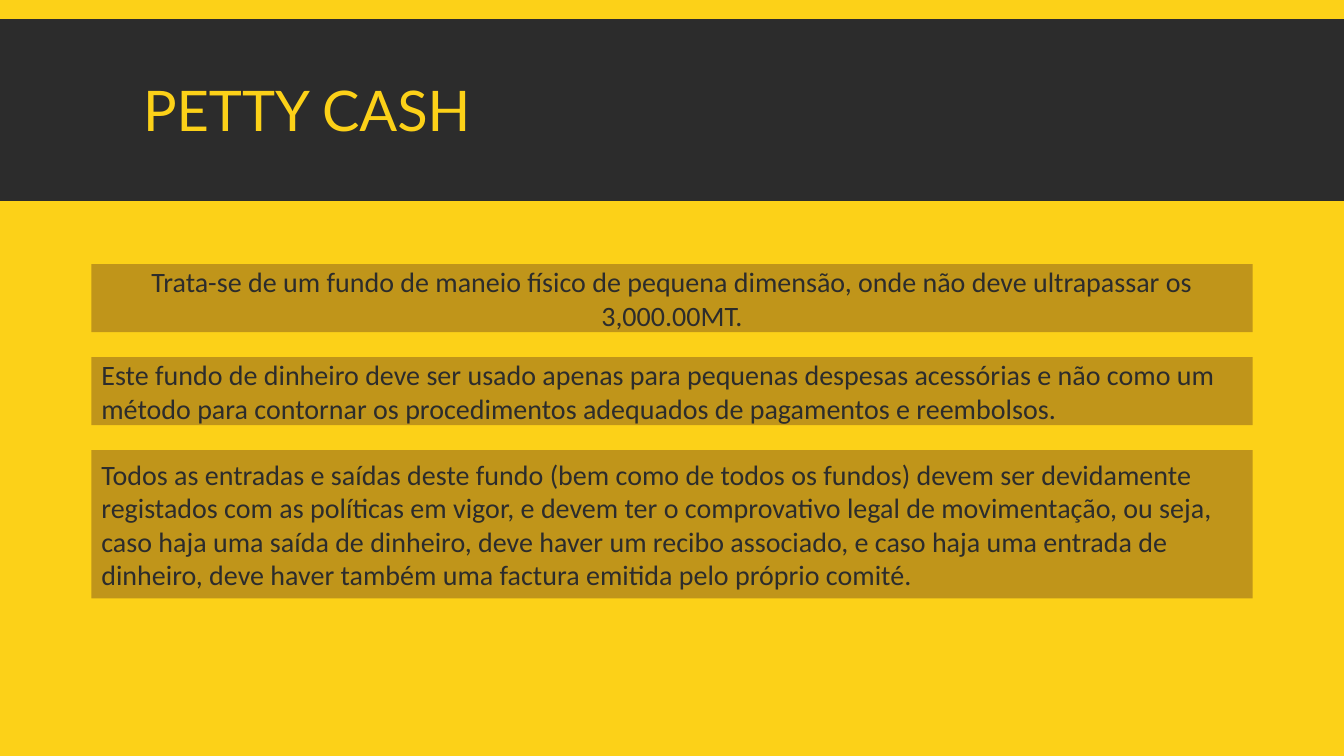
from pptx import Presentation
from pptx.dml.color import RGBColor
from pptx.enum import shapes, text
from pptx.util import Pt

YELLOW, DARK, OCHRE = "FCD118", "2C2C2C", "C0951A"
LEFT, CENTER = text.PP_ALIGN.LEFT, text.PP_ALIGN.CENTER


def add_box(x, y, w, h, color):
    sp = s.shapes.add_shape(shapes.MSO_SHAPE.RECTANGLE, Pt(x), Pt(y), Pt(w), Pt(h))
    sp.shadow.inherit = False
    sp.fill.solid()
    sp.fill.fore_color.rgb = RGBColor.from_string(color)
    sp.line.fill.background()
    return sp


def write(sp, words, size, font, color, align):
    tf = sp.text_frame
    tf.word_wrap = True
    tf.auto_size = text.MSO_AUTO_SIZE.NONE
    tf.vertical_anchor = text.MSO_ANCHOR.MIDDLE
    p = tf.paragraphs[0]
    p.alignment = align
    r = p.add_run()
    r.text = words
    r.font.size = Pt(size)
    r.font.name = font
    r.font.color.rgb = RGBColor.from_string(color)


prs = Presentation()
prs.slide_width, prs.slide_height = Pt(960), Pt(540)
s = prs.slides.add_slide(prs.slide_layouts[5])
s.background.fill.solid()
s.background.fill.fore_color.rgb = RGBColor.from_string(YELLOW)

# Title on its dark band
title = s.shapes.title
title.left, title.top, title.width, title.height = Pt(95), Pt(22.3), Pt(770.4), Pt(118.8)
write(title, "PETTY CASH", 40, "Lato", YELLOW, LEFT)
title.text_frame.paragraphs[0].line_spacing = 0.85
band = add_box(0, 13.7, 960, 129.8, DARK)
title.element.addprevious(band.element)

# Stacked statements with equal gaps
statements = [
    (48.6, CENTER, "Trata-se de um fundo de maneio físico de pequena dimensão, onde não deve "
                   "ultrapassar os 3,000.00MT."),
    (48.6, LEFT, "Este fundo de dinheiro deve ser usado apenas para pequenas despesas acessórias "
                 "e não como um método para contornar os procedimentos adequados de pagamentos "
                 "e reembolsos."),
    (105.8, LEFT, "Todos as entradas e saídas deste fundo (bem como de todos os fundos) devem ser "
                  "devidamente registados com as políticas em vigor, e devem ter o comprovativo "
                  "legal de movimentação, ou seja, caso haja uma saída de dinheiro, deve haver um "
                  "recibo associado, e caso haja uma entrada de dinheiro, deve haver também uma "
                  "factura emitida pelo próprio comité."),
]
top, gap = 188.6, 17.9
for height, align, words in statements:
    sp = add_box(65.3, top, 829.4, height, OCHRE)
    write(sp, words, 20, "Calibri", DARK, align)
    top += height + gap

prs.save("out.pptx")
